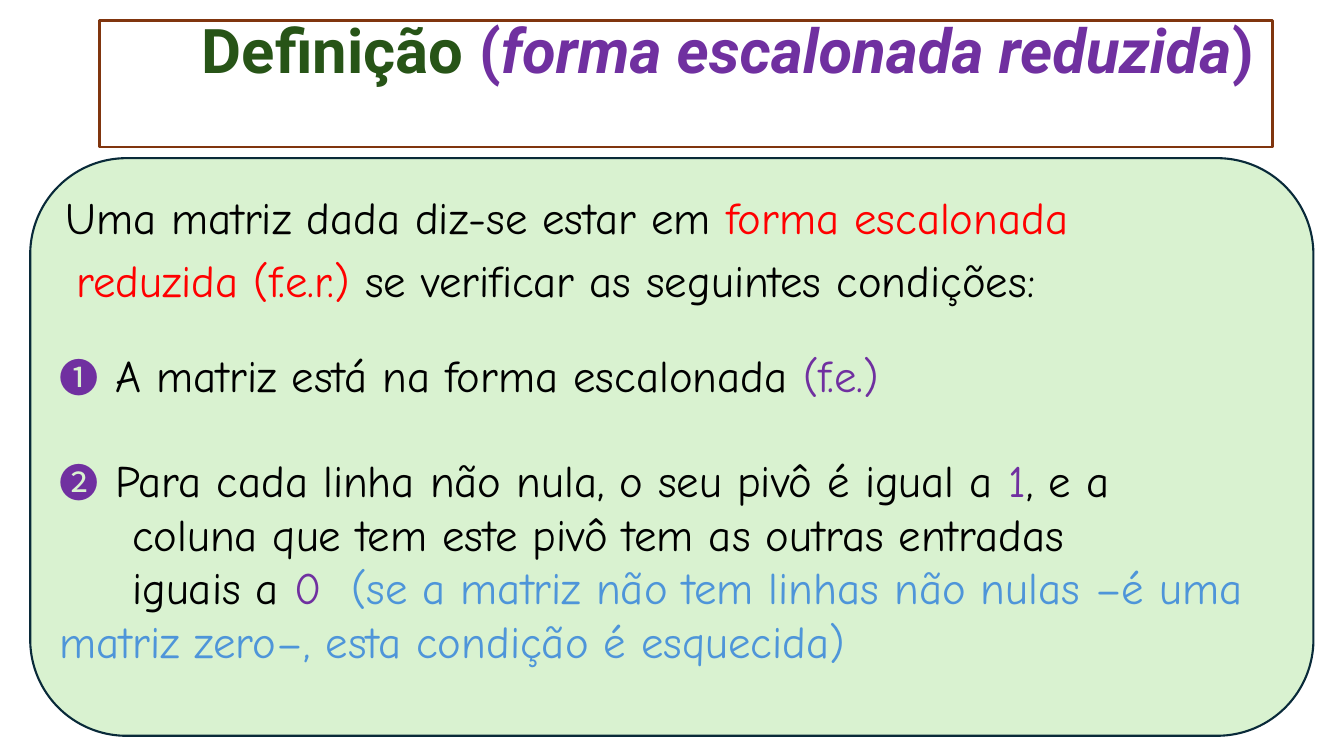
from pptx import Presentation
from pptx import util as u
from pptx.dml import color as col
from pptx.enum import shapes, text

Pt = u.Pt
BLACK, PURPLE, RED, BLUE = "000000", "7030A0", "FF0000", "4E95D9"


def rgb(code):
    return col.RGBColor.from_string(code)


def panel(slide, kind, box, fill, line, width):
    shape = slide.shapes.add_shape(kind, *map(Pt, box))
    shape.shadow.inherit = False
    shape.fill.solid()
    shape.fill.fore_color.rgb = rgb(fill)
    shape.line.color.rgb = rgb(line)
    shape.line.width = Pt(width)
    return shape


def write(para, runs, left=0, first=0):
    """Fill a paragraph with (text, colour) runs; a leading mark gets its own font."""
    para.font.name, para.font.size = "Comic Neue", Pt(32)
    props = para._p.get_or_add_pPr()
    props.set("marL", str(Pt(left)))
    props.set("indent", str(Pt(first)))
    for words, tint in runs:
        run = para.add_run()
        run.text = words
        run.font.color.rgb = rgb(tint)
        if words.endswith("\t"):
            run.font.name, run.font.size = "Noto Sans CJK JP", Pt(28)


def block(slide, box, paras, top=3.6, space=1, before=0):
    frame = slide.shapes.add_textbox(*map(Pt, box)).text_frame
    frame.word_wrap = True
    frame.margin_top = Pt(top)
    for i, spec_row in enumerate(paras):
        para = frame.add_paragraph() if i else frame.paragraphs[0]
        write(para, *spec_row)
        para.line_spacing = space
        para.space_before = Pt(before if i else 0)


def title(slide, box):
    shape = panel(slide, shapes.MSO_SHAPE.RECTANGLE, box, "FFFFFF", "80350E", 2)
    frame = shape.text_frame
    frame.word_wrap = True
    frame.vertical_anchor = text.MSO_ANCHOR.TOP
    frame.margin_top = frame.margin_right = 0
    frame.margin_left = Pt(73)
    para = frame.paragraphs[0]
    para.alignment = text.PP_ALIGN.LEFT
    para.line_spacing = 0.9
    para.font.name, para.font.size, para.font.bold = "Roboto", Pt(44), True
    for words, tint, slant in (
        ("Definição ", "275417", False),
        ("(", PURPLE, False),
        ("forma escalonada reduzida", PURPLE, True),
        (")", PURPLE, False),
    ):
        run = para.add_run()
        run.text = words
        run.font.color.rgb = rgb(tint)
        run.font.italic = slant


def content(slide, box):
    x, y, w, h = box
    panel(slide, shapes.MSO_SHAPE.ROUNDED_RECTANGLE, box, "D9F2D0", "092A39", 1.5)

    # Opening statement
    block(slide, (x + 5.8, y + 20.9, 881, 95), [
        ([("Uma matriz dada diz-se estar em ", BLACK), ("forma escalonada", RED)], 12),
        ([("reduzida (f.e.r.) ", RED),
          ("se verificar as seguintes condições:", BLACK)], 20),
    ], top=6, space=0.9, before=10)

    # Condition 1
    block(slide, (x + 13.7, y + 131.8, 848, 68), [
        ([("➊\t", PURPLE), ("A matriz está na forma escalonada ", BLACK),
          ("(f.e.)", PURPLE)], 40, -40),
    ])

    # Condition 2
    block(slide, (x + 13.7, y + 206.7, 874, 184), [
        ([("➋\t", PURPLE), ("Para cada linha não nula, o seu pivô é igual a ", BLACK),
          ("1", PURPLE), (", e a", BLACK)], 40, -40),
        ([("coluna que tem este pivô tem as outras entradas", BLACK)], 52),
        ([("iguais a ", BLACK), ("0  ", PURPLE),
          ("(se a matriz não tem linhas não nulas –é uma matriz zero–, "
           "esta condição é esquecida)", BLUE)], 0, 52),
    ])


def main():
    deck = Presentation()
    deck.slide_width, deck.slide_height = Pt(960), Pt(540)
    slide = deck.slides.add_slide(deck.slide_layouts[6])
    content(slide, (21.6, 113, 916.6, 412.6))
    title(slide, (71.3, 14.4, 837.4, 90.7))
    deck.save("out.pptx")


if __name__ == "__main__":
    main()
